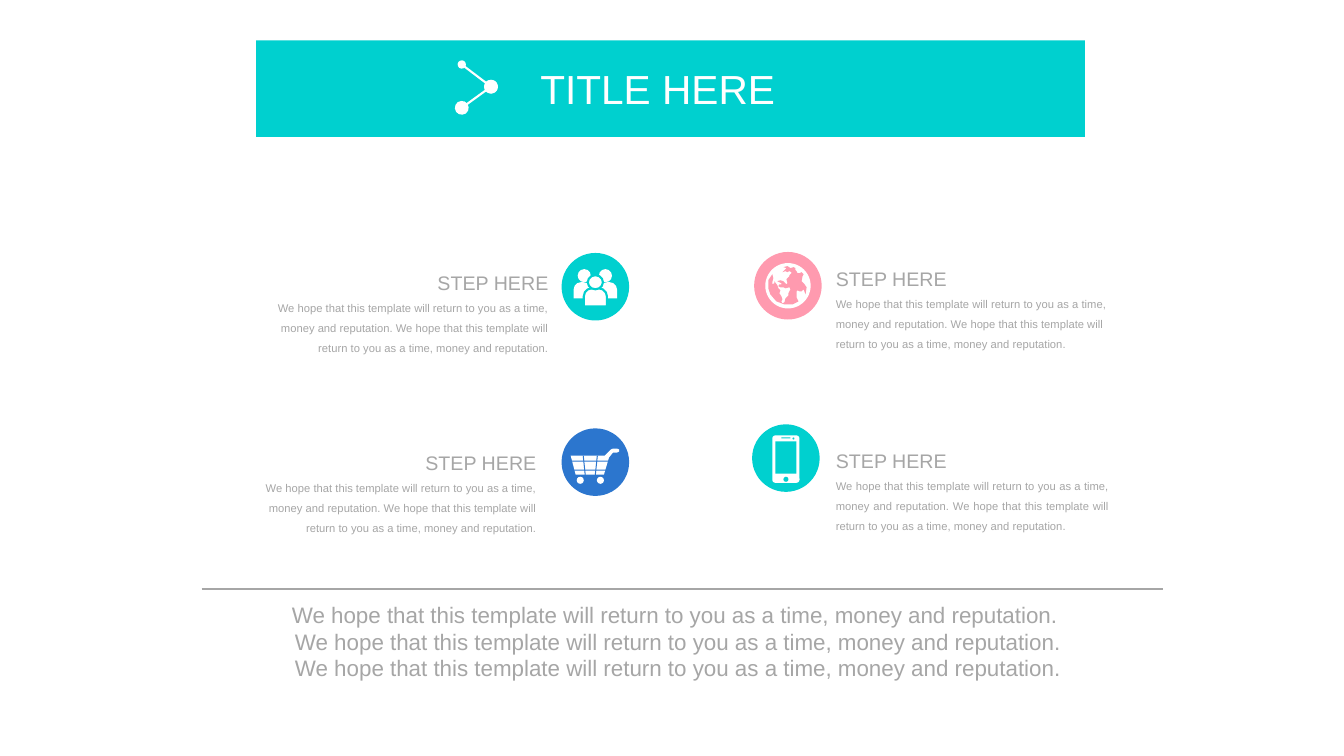
"""Build a slide with a title band, four icon steps and a closing message."""
from dataclasses import dataclass

from lxml import etree
from pptx import Presentation
from pptx.dml.color import RGBColor
from pptx.enum.shapes import MSO_CONNECTOR, MSO_SHAPE
from pptx.enum.text import MSO_AUTO_SIZE, PP_ALIGN
from pptx.oxml.ns import qn
from pptx.util import Emu, Pt

RECT, OVAL = MSO_SHAPE.RECTANGLE, MSO_SHAPE.OVAL
ROUNDED, ROUND_TOP = MSO_SHAPE.ROUNDED_RECTANGLE, MSO_SHAPE.ROUND_2_SAME_RECTANGLE
STRAIGHT = MSO_CONNECTOR.STRAIGHT
LEFT, CENTER, RIGHT, JUSTIFY = PP_ALIGN.LEFT, PP_ALIGN.CENTER, PP_ALIGN.RIGHT, PP_ALIGN.JUSTIFY
FIT = MSO_AUTO_SIZE.SHAPE_TO_FIT_TEXT


@dataclass(frozen=True)
class Theme:
    font: str = "Arial"
    white: str = "FFFFFF"
    teal: str = "00D0CF"
    pink: str = "FF9AAF"
    blue: str = "2C76CE"
    grey: str = "A6A6A6"
    title: int = 29
    message: int = 16
    heading: int = 14
    body: int = 8


THEME = Theme()
CELL = 9144
COLUMNS, ROWS = 1333, 750
DISC = 67

TITLE = "TITLE HERE"
HEADING = "STEP HERE"
SENTENCE = "We hope that this template will return to you as a time, money and reputation."
MESSAGE = [SENTENCE + " ", SENTENCE, SENTENCE]
STEP_TEXT = [(HEADING, THEME.heading), (f"{SENTENCE} {SENTENCE}", THEME.body)]

BAND = (254, 40, 822, 96)
TITLE_BOX = (526, 58, 255, 59)
MESSAGE_BOX = (271, 589, 803, 94)
RULE = ((200, 584), (1153, 584))
MOTIF = [((458, 64), (487, 86), "med", "lg"), ((487, 86), (458, 107), "lg", "lg")]

PEOPLE = [
    (OVAL, (16, 16, 13, 13), "glyph"),
    (OVAL, (37, 16, 13, 13), "glyph"),
    (ROUND_TOP, (12, 29, 17, 16), "glyph"),
    (ROUND_TOP, (38, 29, 17, 16), "glyph"),
    (ROUND_TOP, (22, 35, 23, 18), "outlined"),
    (OVAL, (26, 22, 15, 14), "outlined"),
]
OCEAN = [
    (50, 32), (47, 29), (48, 24), (49, 22), (47, 20), (45, 21), (43, 21), (42, 19),
    (41, 18), (41, 16), (39, 15), (36, 16), (33, 14), (29, 15), (32, 16), (28, 20),
    (31, 19), (33, 20), (35, 19), (37, 20), (37, 21), (35, 23), (35, 24), (34, 25),
    (32, 27), (33, 31), (32, 32), (31, 31), (29, 29), (26, 28), (23, 29), (27, 31),
    (27, 32), (25, 32), (24, 34), (26, 35), (29, 35), (31, 36), (35, 35), (36, 37),
    (34, 41), (34, 43), (31, 46), (30, 50), (28, 51), (27, 49), (28, 47), (27, 44),
    (25, 41), (26, 38), (24, 36), (23, 33), (20, 29), (20, 31), (18, 32), (18, 30),
    (19, 26), (18, 22), (14, 28), (14, 36), (16, 42), (22, 49), (30, 52), (38, 52),
    (44, 49), (42, 45), (42, 39), (43, 38), (45, 39), (47, 39), (49, 37), (51, 42),
    (52, 35),
]
GLOBE = [(OVAL, (11, 11, 45, 45), "glyph"), (None, OCEAN, "disc")]
CART = [
    (None, [(9, 27), (43, 27), (49, 21), (51, 20), (55, 20), (57, 21), (57, 23), (55, 24),
            (51, 24), (47, 29), (42, 46), (14, 46)], "glyph"),
    (RECT, (10, 32, 38, 1), "disc"),
    (RECT, (12, 41, 34, 1), "disc"),
    (None, [(21, 27), (22, 27), (24, 46), (23, 46)], "disc"),
    (None, [(35, 27), (36, 27), (34, 46), (33, 46)], "disc"),
    (OVAL, (15, 48, 7, 7), "glyph"),
    (OVAL, (35, 48, 7, 7), "glyph"),
]
PHONE = [
    (ROUNDED, (20, 11, 27, 47), "glyph"),
    (RECT, (23, 17, 21, 32), "disc"),
    (RECT, (29, 13, 9, 1), "disc"),
    (OVAL, (40, 13, 2, 2), "disc"),
    (OVAL, (31, 52, 5, 5), "disc"),
]

STEPS = [
    ((748, 250), THEME.pink, GLOBE, (829, 253, 271, 96), LEFT),
    ((746, 421), THEME.teal, PHONE, (829, 434, 271, 96), JUSTIFY),
    ((557, 251), THEME.teal, PEOPLE, (265, 257, 279, 96), RIGHT),
    ((557, 425), THEME.blue, CART, (250, 436, 282, 96), RIGHT),
]


def cells(values):
    return [Emu(value * CELL) for value in values]


def paint(shape, fill, outline=None):
    shape.shadow.inherit = False
    shape.fill.solid()
    shape.fill.fore_color.rgb = RGBColor.from_string(fill)
    if outline:
        shape.line.color.rgb = RGBColor.from_string(outline)
        shape.line.width = Pt(1.5)
    else:
        shape.line.fill.background()


def add_part(page, kind, place, fill, outline=None, origin=(0, 0)):
    if kind is None:
        builder = page.shapes.build_freeform(*place[0], scale=CELL)
        builder.add_line_segments(place[1:], close=True)
        shape = builder.convert_to_shape(*cells(origin))
    else:
        left, top, width, height = place
        frame = cells((origin[0] + left, origin[1] + top, width, height))
        shape = page.shapes.add_shape(kind, *frame)
        if kind == ROUND_TOP:
            shape.adjustments[0] = 0.45
        elif kind == ROUNDED:
            shape.adjustments[0] = 0.11
    paint(shape, fill, outline)


def add_icon(page, origin, color, parts):
    add_part(page, OVAL, (0, 0, DISC, DISC), color, origin=origin)
    for kind, place, role in parts:
        fill = color if role == "disc" else THEME.white
        outline = color if role == "outlined" else None
        add_part(page, kind, place, fill, outline, origin)


def add_text(page, place, lines, color, align=LEFT, spacing=None, inset=(0, 0), wrap=True):
    box = page.shapes.add_textbox(*cells(place))
    frame = box.text_frame
    frame.word_wrap = wrap
    frame.auto_size = FIT
    frame.margin_left = frame.margin_right = Emu(inset[0] * CELL)
    frame.margin_top = frame.margin_bottom = Emu(inset[1] * CELL)
    for index, (text, size) in enumerate(lines):
        para = frame.paragraphs[0] if index == 0 else frame.add_paragraph()
        para.alignment = align
        if spacing:
            para.line_spacing = spacing
        span = para.add_run()
        span.text = text
        span.font.name = THEME.font
        span.font.size = Pt(size)
        span.font.color.rgb = RGBColor.from_string(color)


def add_line(page, start, end, color, width, dots=()):
    line = page.shapes.add_connector(STRAIGHT, *cells(start + end))
    line.line.color.rgb = RGBColor.from_string(color)
    line.line.width = Pt(width)
    stroke = line.line._get_or_add_ln()
    for tag, size in zip(("a:headEnd", "a:tailEnd"), dots):
        etree.SubElement(stroke, qn(tag), type="oval", w=size, len=size)
    etree.SubElement(line._element.spPr, qn("a:effectLst"))


def main():
    deck = Presentation()
    deck.slide_width, deck.slide_height = cells((COLUMNS, ROWS))
    page = deck.slides.add_slide(deck.slide_layouts[6])
    add_part(page, RECT, BAND, THEME.teal)
    add_text(page, TITLE_BOX, [(TITLE, THEME.title)], THEME.white, inset=(10, 5), wrap=False)
    for start, end, *dots in MOTIF:
        add_line(page, start, end, THEME.white, 1.5, dots)
    for origin, color, parts, place, align in STEPS:
        add_icon(page, origin, color, parts)
        add_text(page, place, STEP_TEXT, THEME.grey, align=align, spacing=1.5)
    add_line(page, *RULE, THEME.grey, 1.25)
    message = [(line, THEME.message) for line in MESSAGE]
    add_text(page, MESSAGE_BOX, message, THEME.grey, align=CENTER, inset=(13, 7), wrap=False)
    deck.save("out.pptx")


if __name__ == "__main__":
    main()
